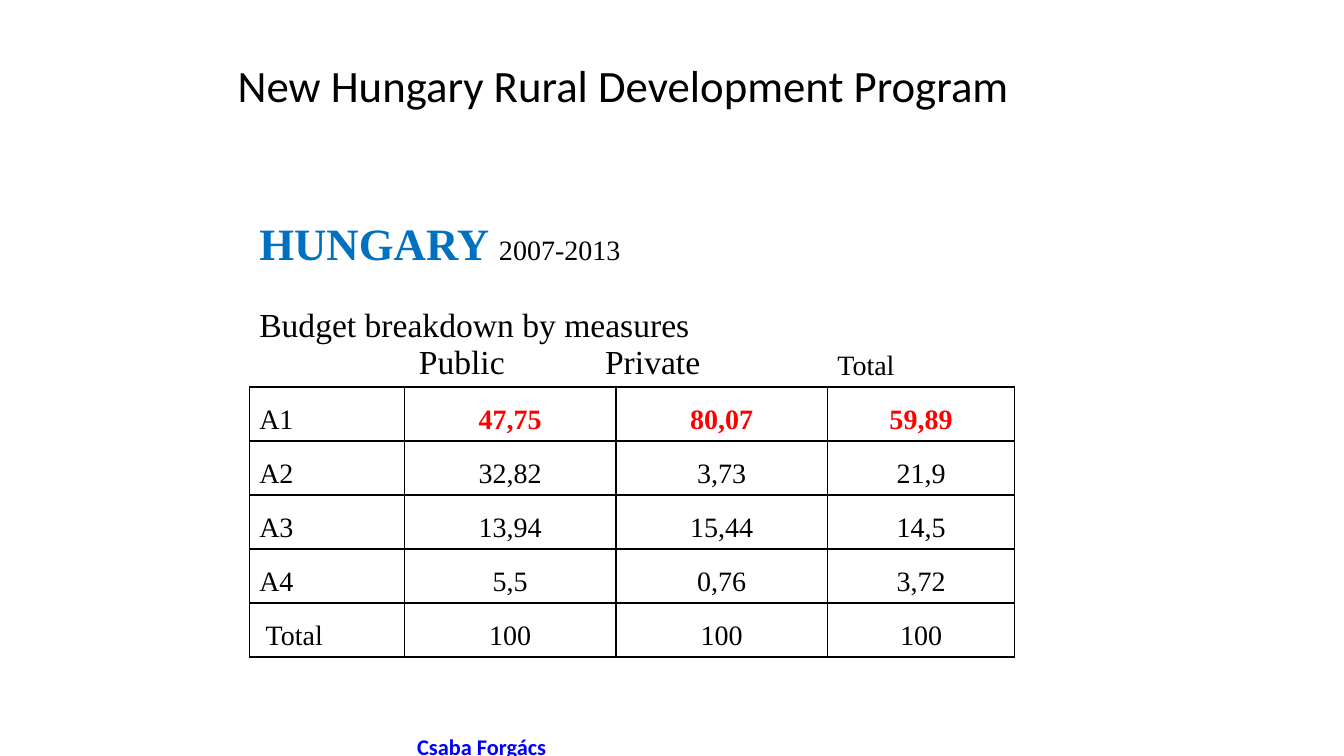
import pptx
import pptx.dml.color
import pptx.enum.text
import pptx.oxml
import pptx.oxml.ns
import pptx.util
from dataclasses import dataclass

Pt = pptx.util.Pt
RGB = pptx.dml.color.RGBColor.from_string
ALIGN = pptx.enum.text.PP_ALIGN
ANCHOR = pptx.enum.text.MSO_ANCHOR


@dataclass(frozen=True)
class Theme:
    sans: str = "Calibri"
    serif: str = "Times New Roman"
    black: str = "000000"
    country: str = "0070C0"
    highlight: str = "FF0000"
    author: str = "0000FF"
    heading_size: int = 32
    subtitle_size: int = 24
    body_size: int = 20
    author_size: int = 16


THEME = Theme()
COLUMN_WIDTHS = (111, 151, 151, 134)
HEADING_HEIGHTS = (87, 80)
MEASURE_HEIGHT = 38.6
PUBLIC_TAB, PRIVATE_TAB = 114, 247
MEASURES = (
    ("A1", "47,75", "80,07", "59,89"),
    ("A2", "32,82", "3,73", "21,9"),
    ("A3", "13,94", "15,44", "14,5"),
    ("A4", "5,5", "0,76", "3,72"),
    (" Total", "100", "100", "100"),
)


def style(font, name, size, color, bold=False):
    font.name, font.size, font.bold = name, Pt(size), bold
    font.color.rgb = RGB(color)


def add_line(slide, box, text, size, color, bold=False, indent=7.2):
    """One line of sans text, starting at the indent inside its box."""
    frame = slide.shapes.add_textbox(*map(Pt, box)).text_frame
    frame.word_wrap = True
    frame.margin_left = Pt(indent)
    line = frame.paragraphs[0]
    line.text = text
    style(line.font, THEME.sans, size, color, bold)


def set_borders(cell, ruled_sides):
    """Rule the given sides (of L, R, T, B) and clear the others."""
    properties = cell._tc.get_or_add_tcPr()
    for position, side in enumerate("LRTB"):
        ink = (f'<a:solidFill><a:srgbClr val="{THEME.black}"/></a:solidFill>'
               if side in ruled_sides else "<a:noFill/>")
        properties.insert(position, pptx.oxml.parse_xml(
            f'<a:ln{side} {pptx.oxml.ns.nsdecls("a")} w="{Pt(1)}">{ink}</a:ln{side}>'))


def set_tabs(paragraph, positions):
    stops = "".join(f'<a:tab pos="{Pt(p)}" algn="l"/>' for p in positions)
    paragraph._p.get_or_add_pPr().insert(0, pptx.oxml.parse_xml(
        f'<a:tabLst {pptx.oxml.ns.nsdecls("a")}>{stops}</a:tabLst>'))


def fill_headings(table):
    # Country and period
    table.cell(0, 0).merge(table.cell(0, 2))
    title = table.cell(0, 0).text_frame.paragraphs[0]
    country, period = title.add_run(), title.add_run()
    country.text, period.text = "HUNGARY ", "2007-2013"
    style(country.font, THEME.serif, THEME.heading_size, THEME.country, True)
    style(period.font, THEME.serif, THEME.body_size, THEME.black)

    # Subtitle with the column names on tab stops
    table.cell(1, 0).merge(table.cell(1, 2))
    frame = table.cell(1, 0).text_frame
    subtitle, columns = frame.paragraphs[0], frame.add_paragraph()
    subtitle.text = "Budget breakdown by measures"
    columns.text = "\tPublic\tPrivate"
    for paragraph in (subtitle, columns):
        style(paragraph.font, THEME.serif, THEME.subtitle_size, THEME.black)
    set_tabs(columns, (PUBLIC_TAB, PRIVATE_TAB))

    total = table.cell(1, 3).text_frame.paragraphs[0]
    total.text = "Total"
    style(total.font, THEME.serif, THEME.body_size, THEME.black)


def add_budget_table(slide, box):
    heights = HEADING_HEIGHTS + (MEASURE_HEIGHT,) * len(MEASURES)
    table = slide.shapes.add_table(
        len(heights), len(COLUMN_WIDTHS), *map(Pt, box)).table
    table.first_row = table.horz_banding = False
    for column, width in zip(table.columns, COLUMN_WIDTHS):
        column.width = Pt(width)
    for row, height in zip(table.rows, heights):
        row.height = Pt(height)

    fill_headings(table)

    # Measures, with the shares of the first one highlighted
    for r, values in enumerate(MEASURES):
        for c, value in enumerate(values):
            share = table.cell(r + len(HEADING_HEIGHTS), c).text_frame.paragraphs[0]
            share.text = value
            share.alignment = ALIGN.CENTER if c else ALIGN.LEFT
            leading = r == 0 and c > 0
            style(share.font, THEME.serif, THEME.body_size,
                  THEME.highlight if leading else THEME.black, leading)

    # Rules: none around the country, one under the column names, a full grid below
    for r, row in enumerate(table.rows):
        for cell in row.cells:
            cell.vertical_anchor = ANCHOR.BOTTOM
            cell.fill.background()
            set_borders(cell, ("", "B")[r] if r < 2 else "LRTB")


def build_slide(deck):
    slide = deck.slides.add_slide(deck.slide_layouts[6])
    # Author
    add_line(slide, (208, 520, 244, 27), "Csaba Forgács",
             THEME.author_size, THEME.author, bold=True, indent=90)
    # Budget
    add_budget_table(slide, (178, 109.4, sum(COLUMN_WIDTHS), 360))
    # Title
    add_line(slide, (162.7, 37.4, 623.5, 45.4), "New Hungary Rural Development Program",
             THEME.heading_size, THEME.black)


def main():
    deck = pptx.Presentation()
    deck.slide_width, deck.slide_height = Pt(960), Pt(540)
    build_slide(deck)
    deck.save("out.pptx")


if __name__ == "__main__":
    main()
